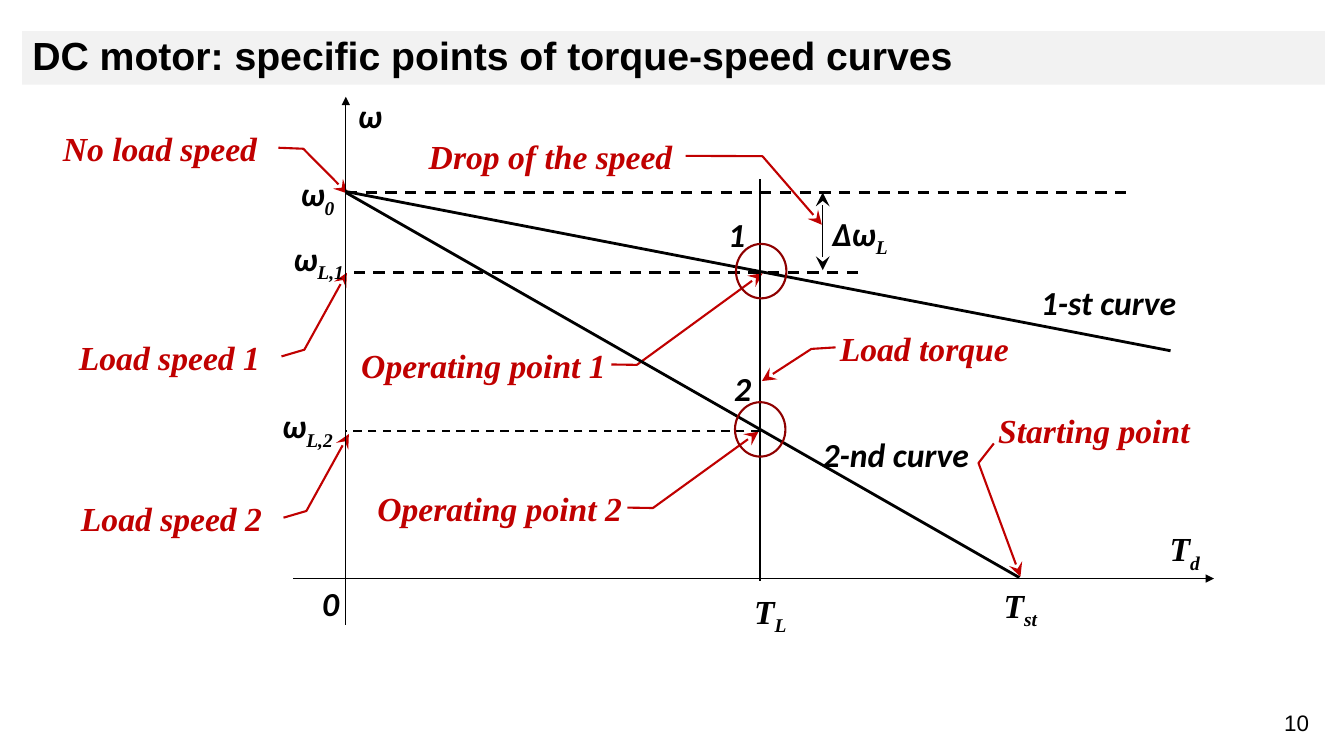
from dataclasses import dataclass

from pptx import Presentation
from pptx import util as u
from pptx.dml.color import RGBColor
from pptx.enum import dml, shapes, text
from pptx.oxml import ns
from lxml import etree

SCALE = 9144  # EMU in one px, 100 px to the inch
HUES = {"ink": "000000", "red": "C00000", "ring": "8E0000",
        "band": "F2F2F2", "paper": "FFFFFF"}
SERIF, SANS = "Times New Roman", "Calibri"
LEFT, MID, RIGHT = text.PP_ALIGN.LEFT, text.PP_ALIGN.CENTER, text.PP_ALIGN.RIGHT
BOLD = {"size": u.Pt(24), "bold": True, "italic": True}
FLUSH = {"margin_left": 0, "margin_top": 0, "margin_right": 0,
         "margin_bottom": 0, "word_wrap": True}
SPACED = {"line_spacing": 1.15, "space_after": u.Pt(10)}
HEADS = {"triangle": {"type": "triangle"},
         "stealth": {"type": "stealth", "w": "lg", "len": "lg"}}


@dataclass
class Line:
    start: tuple[int, int]
    end: tuple[int, int]
    width: float = 2
    dash: bool = False
    head: str = ""
    tail: str = ""


@dataclass
class Label:
    """A centred label; the part after "_" is a subscript."""
    words: str
    left: int
    top: int
    wide: int = 104
    face: str = SANS


@dataclass
class Note:
    """A red callout; bends holds the y, x pairs of its leader."""
    words: str
    left: int
    top: int
    wide: int
    bends: tuple[float, ...]
    flip: bool = True
    gap: int = 0
    fill: bool = True


LOW = (.558, -.02, .413, -.126, -1.248, -.323)
NOTES = [
    Note("No load speed", 58, 121, 214, (.558, -.02, .579, -.135, 1.547, -.341), gap=17),
    Note("Load speed 1", 61, 328, 214, LOW, gap=17),
    Note("Load speed 2", 63, 488, 214, LOW, gap=17),
    Note("Load torque", 833, 319, 214, (.558, -.02, .591, -.132, 1.284, -.361), flip=False),
    Note("Drop of the speed", 421, 129, 254, (.558, -.02, .565, -.32, 2.044, -.552), gap=8),
    Note("Operating point 1", 334, 336, 267, (.558, -.02, .566, -.115, -1.413, -.582), fill=False),
    Note("Operating point 2", 350, 478, 267, (.558, -.02, .566, -.115, -1.082, -.507), fill=False),
    Note("Starting point", 990, 401, 267, (.848, -.016, 1.27, -.073, 3.721, .083),
         flip=False, fill=False),
]
LINES = [
    Line((343, 620), (343, 96), .75, tail="triangle"),
    Line((291, 574), (1204, 574), .75, tail="triangle"),
    Line((343, 191), (1120, 191), dash=True),
    Line((851, 270), (343, 270), dash=True),
    Line((753, 428), (343, 428), 1.5, dash=True),
    Line((754, 576), (754, 178), 1.5),
    Line((816, 268), (816, 191), .5, head="stealth", tail="stealth"),
    Line((1161, 348), (343, 190)),
    Line((1011, 573), (343, 191)),
]
RINGS = [(730, 242), (729, 399)]
LABELS = [
    Label("ω", 315, 88),
    Label("ω_0", 263, 165),
    Label("ω_L,1", 264, 229),
    Label("ω_L,2", 253, 395),
    Label("Δω_L", 801, 204),
    Label("0", 276, 572),
    Label("T_d", 1123, 517, face=SERIF),
    Label("T_L", 712, 579, face=SERIF),
    Label("T_st", 960, 573, face=SERIF),
    Label("1-st curve", 947, 274, 305),
    Label("2-nd curve", 736, 424, 305),
    Label("1", 703, 206, 55),
    Label("2", 709, 359, 55),
]


def px(*sizes: int) -> list[u.Emu]:
    return [u.Emu(size * SCALE) for size in sizes]


def hue(name: str) -> RGBColor:
    return RGBColor.from_string(HUES[name])


def style(thing, form: dict) -> None:
    for key, value in form.items():
        setattr(thing, key, value)


def paint(shape, fill: str = "") -> None:
    shape.shadow.inherit = False
    if fill:
        shape.fill.solid()
        shape.fill.fore_color.rgb = hue(fill)
    else:
        shape.fill.background()


def stroke(line, color: str, width: float, head: str = "", tail: str = "") -> None:
    line.color.rgb = hue(color)
    line.width = u.Pt(width)
    for tag, kind in (("a:headEnd", head), ("a:tailEnd", tail)):
        if kind:
            etree.SubElement(line._get_or_add_ln(), ns.qn(tag), HEADS[kind])


def write(para, words: str, form: dict, color: str = "ink"):
    run = para.add_run()
    run.text = words
    style(run.font, form)
    run.font.color.rgb = hue(color)
    return run


def draw_line(slide, item: Line) -> None:
    link = slide.shapes.add_connector(
        shapes.MSO_CONNECTOR.STRAIGHT, *px(*item.start, *item.end))
    if item.dash:
        link.line.dash_style = dml.MSO_LINE.DASH
    stroke(link.line, "ink", item.width, item.head, item.tail)
    etree.SubElement(link._element.spPr, ns.qn("a:effectLst"))


def draw_note(slide, item: Note) -> None:
    shape = slide.shapes.add_shape(
        shapes.MSO_SHAPE.LINE_CALLOUT_2_NO_BORDER,
        *px(item.left, item.top, item.wide, 46))
    for index, bend in enumerate(item.bends):
        shape.adjustments[index] = bend
    paint(shape, "paper" if item.fill else "")
    stroke(shape.line, "red", 1.5, tail="stealth")
    if item.flip:
        shape._element.spPr.find(ns.qn("a:xfrm")).set("flipH", "1")
    frame = shape.text_frame
    style(frame, {**FLUSH, "margin_right": px(item.gap)[0],
                  "vertical_anchor": text.MSO_ANCHOR.TOP})
    para = frame.paragraphs[0]
    style(para, {**SPACED, "alignment": RIGHT if item.flip else LEFT})
    write(para, item.words, {**BOLD, "name": SERIF}, "red")


def draw_label(slide, item: Label) -> None:
    frame = slide.shapes.add_textbox(
        *px(item.left, item.top, item.wide, 68)).text_frame
    style(frame, FLUSH)
    para = frame.paragraphs[0]
    style(para, {**SPACED, "alignment": MID})
    main, _, sub = item.words.partition("_")
    write(para, main, {**BOLD, "name": item.face})
    if sub:
        run = write(para, sub, {**BOLD, "name": SERIF})
        run._r.get_or_add_rPr().set("baseline", "-25000")


def draw_ring(slide, left: int, top: int) -> None:
    ring = slide.shapes.add_shape(shapes.MSO_SHAPE.OVAL, *px(left, top, 50, 54))
    paint(ring)
    stroke(ring.line, "ring", 1.5)


def draw_title(slide) -> None:
    title = slide.shapes.title
    style(title, dict(zip(("left", "top", "width", "height"), px(22, 31, 1292, 53))))
    title.fill.solid()
    title.fill.fore_color.rgb = hue("band")
    style(title.text_frame, {"auto_size": text.MSO_AUTO_SIZE.NONE, "word_wrap": True,
                             "vertical_anchor": text.MSO_ANCHOR.MIDDLE})
    para = title.text_frame.paragraphs[0]
    style(para, {"alignment": LEFT, "line_spacing": .9})
    write(para, "DC motor: specific points of torque-speed curves",
          {"size": u.Pt(28), "bold": True, "name": "Arial"})


def draw_page(slide) -> None:
    para = slide.shapes.add_textbox(*px(1254, 699, 64, 37)).text_frame.paragraphs[0]
    para.alignment = MID
    write(para, "10", {"size": u.Pt(16), "name": "Arial"})


def main() -> None:
    deck = Presentation()
    deck.slide_width, deck.slide_height = px(1333, 750)
    slide = deck.slides.add_slide(deck.slide_layouts[5])
    draw_title(slide)
    for note in NOTES:
        draw_note(slide, note)
    for line in LINES:
        draw_line(slide, line)
    for ring in RINGS:
        draw_ring(slide, *ring)
    for label in LABELS:
        draw_label(slide, label)
    draw_page(slide)
    deck.save("out.pptx")


if __name__ == "__main__":
    main()
